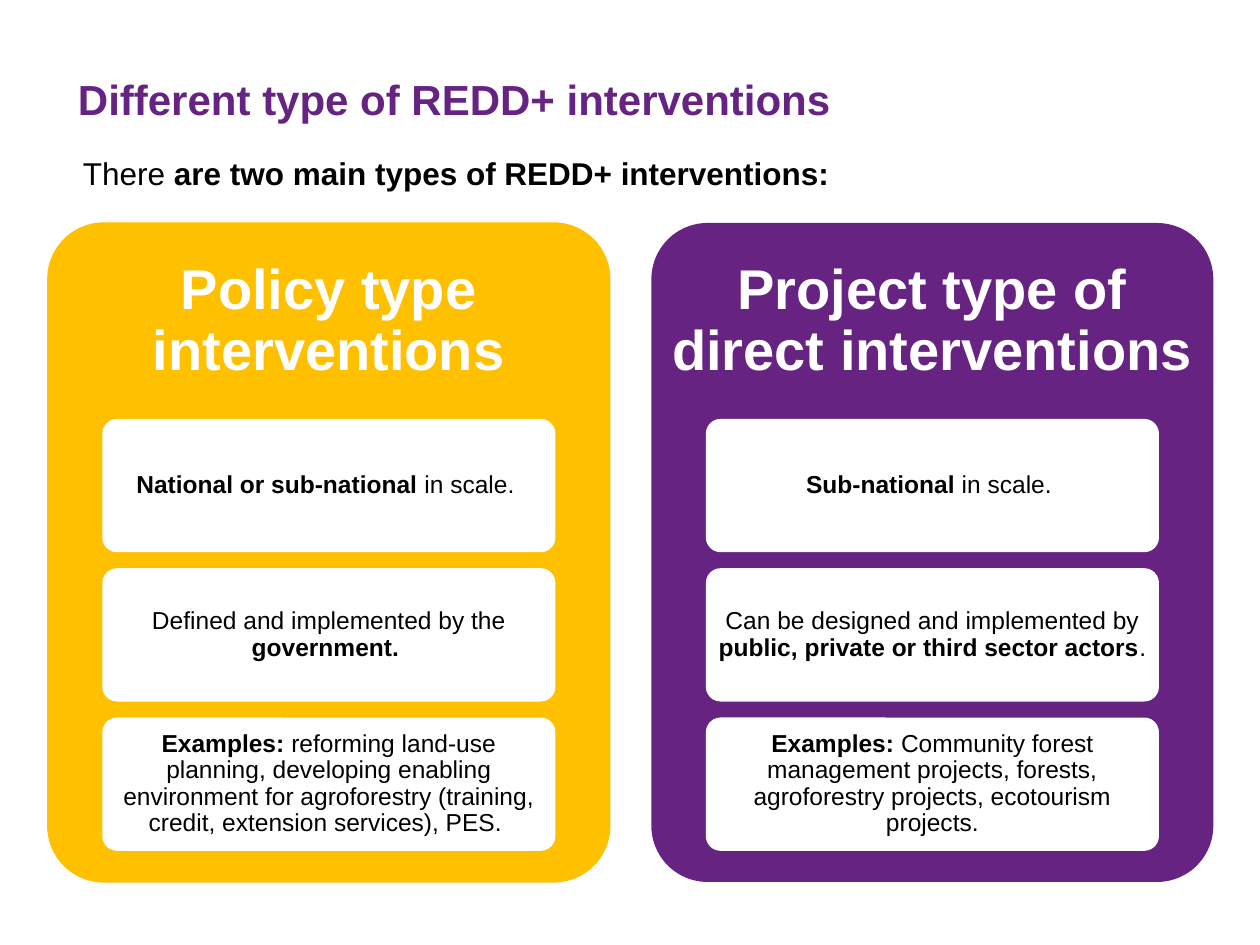
from pptx import Presentation
from pptx import util as u
from pptx.dml.color import RGBColor
from pptx.enum import shapes, text

FONT = "Arial"
HEX = {"purple": "662382", "gold": "FFC000", "white": "FFFFFF", "black": "000000"}

# Each run is (words, bold)
PANELS = [
    ("gold", "Policy type interventions", [
        [("National or sub-national", True), (" in scale. ", False)],
        [("Defined and implemented by the ", False), ("government. ", True)],
        [("Examples: ", True),
         ("reforming land-use planning, developing enabling environment for "
          "agroforestry (training, credit, extension services), PES. ", False)],
    ]),
    ("purple", "Project type of direct interventions", [
        [("Sub-national", True), (" in scale. ", False)],
        [("Can be designed and implemented by ", False),
         ("public, private or third sector actors", True), (". ", False)],
        [("Examples: ", True),
         ("Community forest management projects, forests, agroforestry "
          "projects, ecotourism projects.", False)],
    ]),
]


def rgb(name):
    return RGBColor.from_string(HEX[name])


def box(x, y, w, h):
    return [u.Inches(v) for v in (x, y, w, h)]


def write(shape, runs, size, color, side=0.1, edge=0.05,
          anchor=text.MSO_ANCHOR.TOP, center=False):
    frame = shape.text_frame
    frame.word_wrap = True
    frame.vertical_anchor = anchor
    frame.margin_left = frame.margin_right = u.Inches(side)
    frame.margin_top = frame.margin_bottom = u.Inches(edge)
    para = frame.paragraphs[0]
    para.alignment = text.PP_ALIGN.CENTER if center else text.PP_ALIGN.LEFT
    if center:
        para.line_spacing = 0.9
    for words, bold in runs:
        run = para.add_run()
        run.text = words
        run.font.name = FONT
        run.font.size = u.Pt(size)
        run.font.bold = bold
        run.font.color.rgb = rgb(color)


def round_box(slide, x, y, w, h, color, line=None):
    shape = slide.shapes.add_shape(
        shapes.MSO_SHAPE.ROUNDED_RECTANGLE, *box(x, y, w, h))
    shape.adjustments[0] = 0.1
    shape.shadow.inherit = False
    shape.fill.solid()
    shape.fill.fore_color.rgb = rgb(color)
    if line:
        shape.line.color.rgb = rgb(color)
        shape.line.width = u.Pt(line)
    else:
        shape.line.fill.background()
    return shape


def add_head(slide, x, y):
    # Title and lead sentence
    title = slide.shapes.add_textbox(*box(x, y, 8.69, 0.5))
    write(title, [("Different type of REDD+ interventions", True)], 24, "purple",
          anchor=text.MSO_ANCHOR.BOTTOM)
    lead = slide.shapes.add_textbox(*box(x + 0.04, y + 0.64, 8.38, 0.6))
    write(lead, [("There ", False),
                 ("are two main types of REDD+ interventions:", True)], 18, "black")


def add_panel(slide, x, y, w, h, color, name, cards):
    round_box(slide, x, y, w, h, color, 0.75 if color == "gold" else None)

    # Heading takes the top 30 % of the panel
    top = 0.3 * h
    head = slide.shapes.add_textbox(*box(x, y, w, top))
    write(head, [(name, True)], 32, "white", 0.13, 0.13,
          text.MSO_ANCHOR.MIDDLE, True)

    # Evenly stacked white cards
    inset, tall, step = 0.1 * w, 1.03, 1.185
    for i, runs in enumerate(cards):
        card = round_box(slide, x + inset, y + top + i * step,
                         w - 2 * inset, tall, "white", 2)
        write(card, runs, 14, "black", 0.04, 0.03, text.MSO_ANCHOR.MIDDLE, True)


def main():
    deck = Presentation()
    deck.slide_width, deck.slide_height = u.Inches(10), u.Inches(7.5)
    slide = deck.slides.add_slide(deck.slide_layouts[6])
    add_head(slide, 0.52, 0.53)
    for i, panel in enumerate(PANELS):
        add_panel(slide, 0.38 + i * 4.79, 1.77, 4.46, 5.23, *panel)
    deck.save("out.pptx")


if __name__ == "__main__":
    main()
